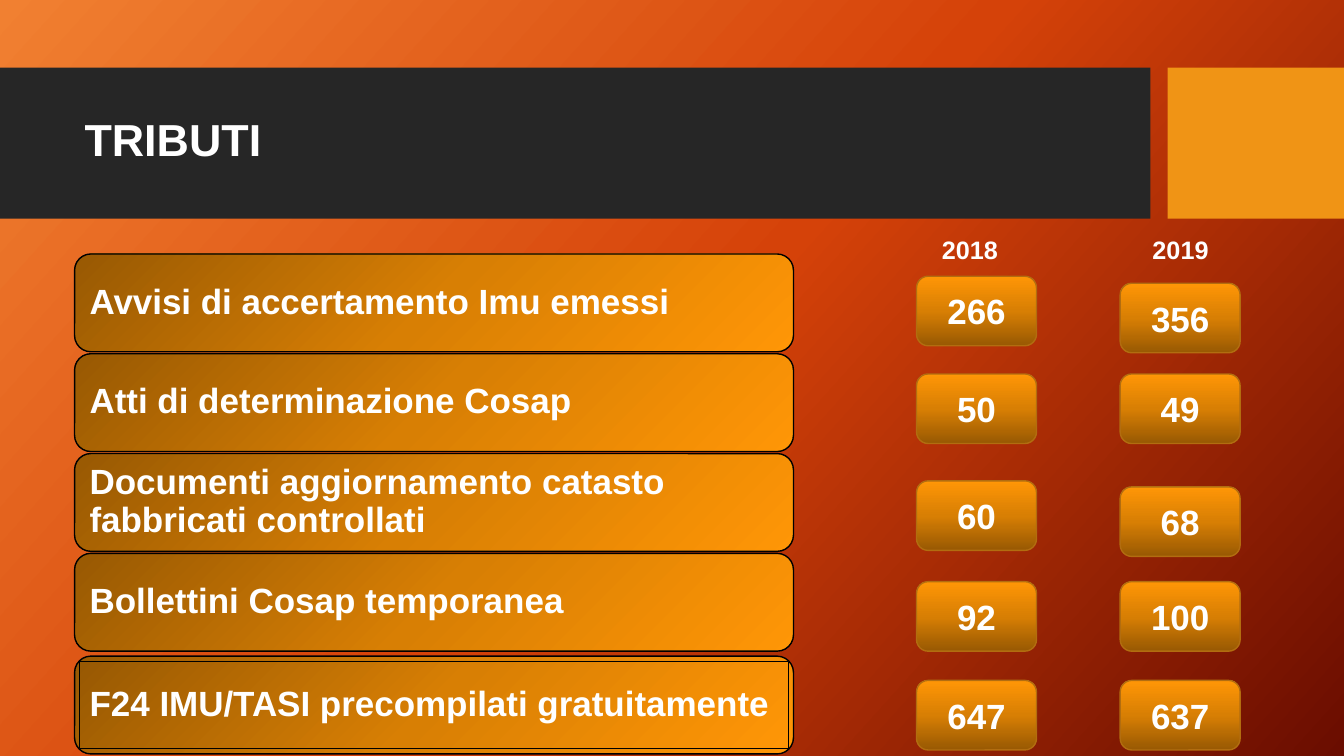
"""Build the TRIBUTI slide comparing tax activity in 2018 and 2019."""
from dataclasses import dataclass
from typing import Optional

import lxml.etree
import pptx
import pptx.dml.color
import pptx.enum.shapes
import pptx.enum.text
import pptx.oxml
import pptx.oxml.ns
import pptx.util

Inches = pptx.util.Inches
Pt = pptx.util.Pt
SHAPE = pptx.enum.shapes.MSO_SHAPE
ALIGN = pptx.enum.text.PP_ALIGN
qn = pptx.oxml.ns.qn

COLORS = {
    "band": "262626",
    "accent": "F09415",
    "text": "FFFFFF",
    "bar_line": "000000",
    "value_line": "B26D10",
}
BACKGROUND_STOPS = ("F18031", "D54209", "6A0D00")
AMBER_STOPS = ("985903", "D87F04", "FF9606")
BAR_LEFT, BAR_WIDTH, BAR_HEIGHT, BAR_INSET = 0.74, 7.13, 0.97, 0.05
VALUE_LEFTS = (9.09, 11.11)
VALUE_WIDTH, VALUE_HEIGHT = 1.19, 0.69


@dataclass
class Box:
    left: float
    top: float
    width: float
    height: float


@dataclass
class Row:
    label: str
    bar_top: float
    values: tuple[str, str]
    value_tops: tuple[float, float]
    framed: bool = False


ROWS = [
    Row("Avvisi di accertamento Imu emessi", 2.52, ("266", "356"), (2.74, 2.81)),
    Row("Atti di determinazione Cosap", 3.51, ("50", "49"), (3.71, 3.71)),
    Row("Documenti aggiornamento catasto fabbricati controllati", 4.5,
        ("60", "68"), (4.77, 4.83)),
    Row("Bollettini Cosap temporanea", 5.49, ("92", "100"), (5.77, 5.77)),
    Row("F24 IMU/TASI precompilati gratuitamente", 6.51,
        ("647", "637"), (6.75, 6.75), framed=True),
]


def rgb(name: str) -> pptx.dml.color.RGBColor:
    """Return the named palette colour."""
    return pptx.dml.color.RGBColor.from_string(COLORS[name])


def set_gradient(fill, root, stops: tuple[str, ...], angle: Optional[int]) -> None:
    """Give a fill evenly spaced stops, clockwise by angle or from the top left corner."""
    fill.gradient()
    grad = root.xpath(".//a:gradFill")[0]
    for child in list(grad):
        grad.remove(child)
    stop_list = lxml.etree.SubElement(grad, qn("a:gsLst"))
    for i, color in enumerate(stops):
        stop = lxml.etree.SubElement(stop_list, qn("a:gs"),
                                     pos=str(100000 * i // (len(stops) - 1)))
        lxml.etree.SubElement(stop, qn("a:srgbClr"), val=color)
    if angle is None:
        circle = lxml.etree.SubElement(grad, qn("a:path"), path="circle")
        lxml.etree.SubElement(circle, qn("a:fillToRect"), r="100000", b="100000")
    else:
        lxml.etree.SubElement(grad, qn("a:lin"), ang=str(angle * 60000), scaled="0")


def add_box(slide, kind, box: Box, line: Optional[str] = None, weight: float = 1):
    """Add an unfilled preset shape without shadow."""
    sp = slide.shapes.add_shape(kind, Inches(box.left), Inches(box.top),
                                Inches(box.width), Inches(box.height))
    sp.shadow.inherit = False
    sp.fill.background()
    if line:
        sp.line.color.rgb = rgb(line)
        sp.line.width = Pt(weight)
    else:
        sp.line.fill.background()
    return sp


def add_amber(slide, kind, box: Box, line: str, angle: Optional[int] = None,
              weight: float = 1):
    """Add an outlined shape with the amber gradient."""
    sp = add_box(slide, kind, box, line, weight)
    set_gradient(sp.fill, sp._element, AMBER_STOPS, angle)
    return sp


def set_text(sp, text: str, size: float, align=ALIGN.LEFT, spacing: float = 1.0):
    """Write one bold white paragraph, vertically centred, and return it."""
    tf = sp.text_frame
    tf.word_wrap = True
    tf.vertical_anchor = pptx.enum.text.MSO_ANCHOR.MIDDLE
    p = tf.paragraphs[0]
    p.text = text
    p.alignment = align
    p.line_spacing = spacing
    for r in p.runs:
        r.font.name = "Arial"
        r.font.size = Pt(size)
        r.font.bold = True
        r.font.color.rgb = rgb("text")
    return p


def add_text(slide, box: Box, text: str, size: float, spacing: float = 1.0):
    """Add a text box and return its shape and paragraph."""
    sp = slide.shapes.add_textbox(Inches(box.left), Inches(box.top),
                                  Inches(box.width), Inches(box.height))
    return sp, set_text(sp, text, size, spacing=spacing)


def add_header(slide) -> None:
    """Draw the title band and its accent block."""
    for box, color in ((Box(0, 0.67, 11.41, 1.5), "band"),
                       (Box(11.58, 0.67, 1.75, 1.5), "accent")):
        sp = add_box(slide, SHAPE.RECTANGLE, box)
        sp.fill.solid()
        sp.fill.fore_color.rgb = rgb(color)
    add_text(slide, Box(0.74, 0.82, 10.51, 1.18), "TRIBUTI", 32, 0.9)


def add_row(slide, row: Row) -> None:
    """Draw a label bar and its two yearly values."""
    bar = Box(BAR_LEFT, row.bar_top, BAR_WIDTH, BAR_HEIGHT)
    inner = Box(bar.left + BAR_INSET, bar.top + BAR_INSET,
                bar.width - 2 * BAR_INSET, bar.height - 2 * BAR_INSET)
    add_amber(slide, SHAPE.ROUNDED_RECTANGLE, bar, "bar_line")
    if row.framed:
        sp = add_amber(slide, SHAPE.RECTANGLE, inner, "bar_line", weight=0.75)
        set_text(sp, row.label, 25, spacing=0.9)
    else:
        sp, _ = add_text(slide, inner, row.label, 25, 0.9)
    tf = sp.text_frame
    tf.margin_left = tf.margin_right = tf.margin_top = tf.margin_bottom = Inches(0.1)
    for left, top, value in zip(VALUE_LEFTS, row.value_tops, row.values):
        sp = add_amber(slide, SHAPE.ROUNDED_RECTANGLE,
                       Box(left, top, VALUE_WIDTH, VALUE_HEIGHT), "value_line", 270)
        set_text(sp, value, 25, ALIGN.CENTER)


def add_years(slide) -> None:
    """Write the column years on centred tab stops."""
    _, p = add_text(slide, Box(8.7, 2.27, 3.78, 0.4), "\t2018\t2019", 18)
    tabs = lxml.etree.SubElement(p._p.get_or_add_pPr(), qn("a:tabLst"))
    for position in (0.82, 2.91):
        lxml.etree.SubElement(tabs, qn("a:tab"), pos=str(Inches(position)), algn="ctr")


def main() -> None:
    """Build and save the slide."""
    prs = pptx.Presentation()
    prs.slide_width, prs.slide_height = Inches(13.33), Inches(7.5)
    slide = prs.slides.add_slide(prs.slide_layouts[6])
    set_gradient(slide.background.fill, slide._element, BACKGROUND_STOPS, 42)
    add_header(slide)
    for row in ROWS:
        add_row(slide, row)
    add_years(slide)
    prs.save("out.pptx")


if __name__ == "__main__":
    main()
